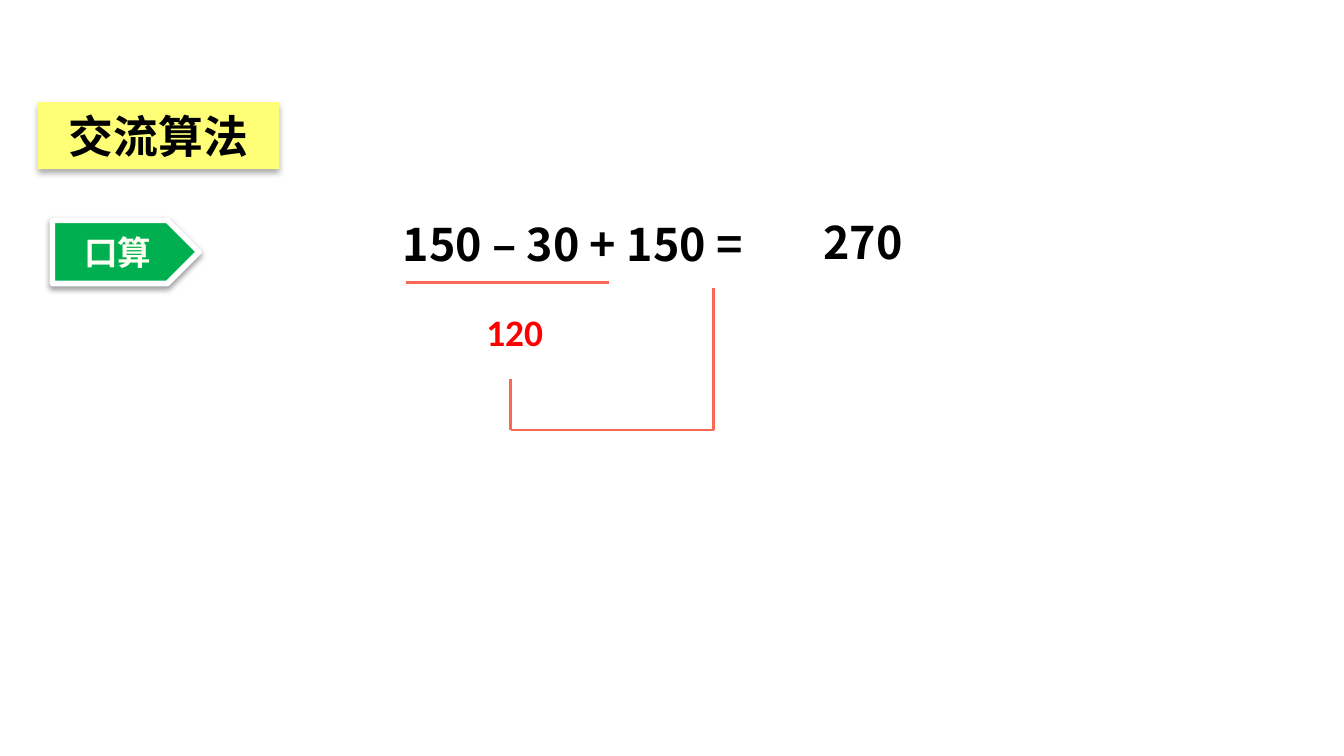
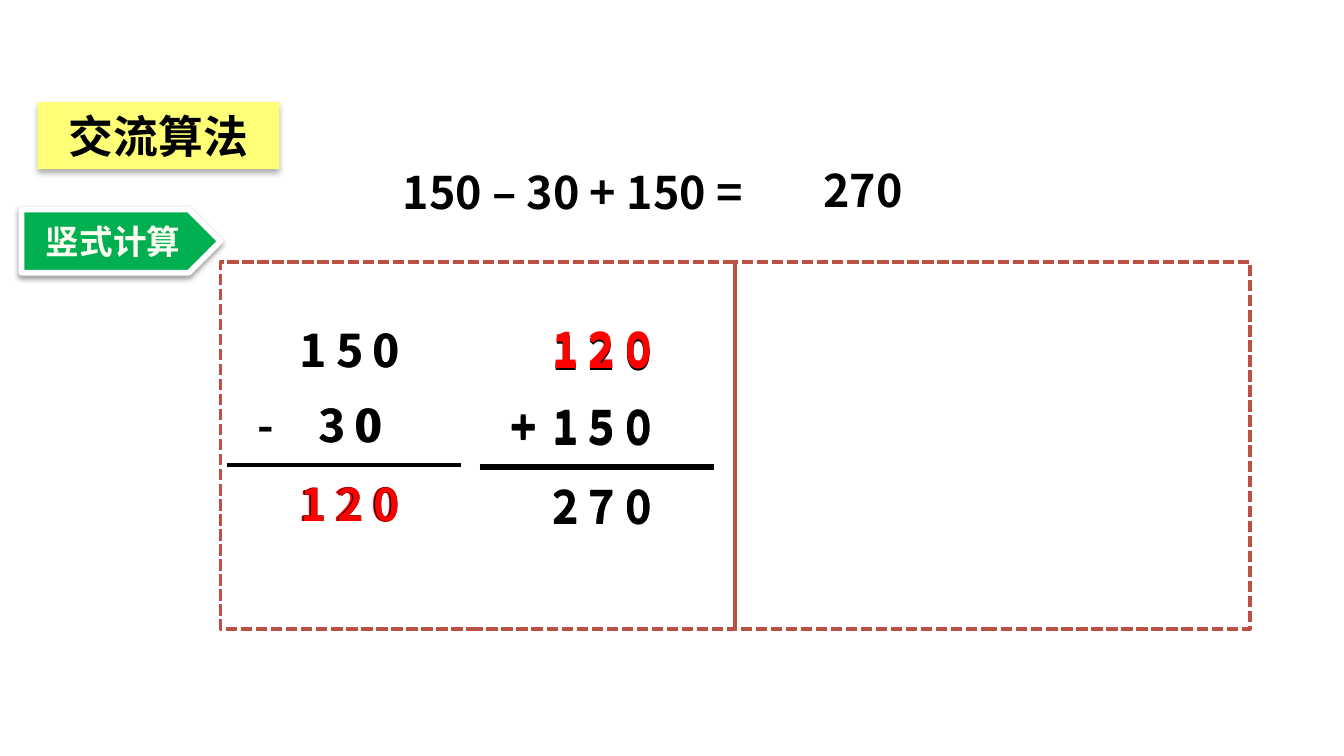
from dataclasses import dataclass

from lxml.etree import SubElement
from pptx import Presentation
from pptx.dml.color import RGBColor
from pptx.enum.dml import MSO_LINE
from pptx.enum.shapes import MSO_CONNECTOR, MSO_SHAPE
from pptx.enum.text import MSO_ANCHOR, PP_ALIGN
from pptx.oxml.ns import qn
from pptx.util import Inches, Pt

# The grid: 100 columns by 56.25 rows of equal cells
CELL = Inches(0.1)
COLUMNS, ROWS = 100, 56.25


@dataclass(frozen=True)
class Theme:
    ink: str = "000000"
    red: str = "FF0000"
    bracket: str = "FA6955"
    frame: str = "BA5143"
    title_fill: str = "FFFF77"
    tag_fill: str = "00B050"
    tag_text: str = "FFFFF4"
    tag_edge: str = "FFFFFF"
    main_font: str = "Noto Sans CJK SC"
    small_font: str = "Calibri"
    main_size: int = 24
    result_size: int = 20
    tag_size: int = 18


THEME = Theme()


@dataclass(frozen=True)
class Area:
    column: float
    row: float
    width: float
    height: float = 5


@dataclass(frozen=True)
class Shadow:
    opacity: int
    blur: float
    distance: float


@dataclass(frozen=True)
class Style:
    color: str = THEME.ink
    size: int = THEME.main_size
    font: str = THEME.main_font
    align: PP_ALIGN = PP_ALIGN.LEFT
    indent: float = 0


@dataclass(frozen=True)
class WrittenSum:
    """A sum set out in columns; carried is the number repeated in red."""
    column: float
    row: float
    first: str
    sign: str
    second: str
    result: str
    carried_down: float
    carried_shift: float = 0
    second_indent: float = 0
    carried_width: float = 19.7


NUMBER = Style()
RED_NUMBER = Style(THEME.red)
RED_RESULT = Style(THEME.red, THEME.result_size, THEME.small_font)
TITLE = Style(align=PP_ALIGN.CENTER)
TAG = Style(THEME.tag_text, THEME.tag_size, THEME.small_font, PP_ALIGN.CENTER)
TITLE_SHADOW = Shadow(32, 3.5, 2.2)
TAG_SHADOW = Shadow(38, 3.1, 1.6)

# Rows of a written sum, counted from its first number
SECOND_DOWN, RULE_DOWN, RESULT_DOWN = 5.6, 11.1, 11.5
NUMBER_WIDTH, SIGN_WIDTH, RULE_WIDTH = 19.7, 10.2, 17.4
SIGN_LEFT, RULE_LEFT = 3.1, 4.4


def cells(count: float) -> int:
    return round(count * CELL)


def place(area: Area) -> tuple[int, ...]:
    return tuple(map(cells, (area.column, area.row, area.width, area.height)))


def write(box, text: str, style: Style) -> None:
    frame = box.text_frame
    frame.word_wrap = True
    frame.vertical_anchor = MSO_ANCHOR.MIDDLE
    frame.margin_top = frame.margin_bottom = 0
    frame.text = text
    para = frame.paragraphs[0]
    para.alignment = style.align
    if style.indent:
        para._p.get_or_add_pPr().set("marL", str(cells(style.indent)))
    font = para.runs[0].font
    font.name, font.size, font.bold = style.font, Pt(style.size), True
    font.color.rgb = RGBColor.from_string(style.color)
    east_asian = SubElement(font._element, qn("a:ea"))
    east_asian.set("typeface", THEME.main_font)


def add_text(shapes, area: Area, text: str, style: Style = NUMBER) -> None:
    write(shapes.add_textbox(*place(area)), text, style)


def add_line(shapes, start: tuple[float, float], end: tuple[float, float],
             color: str, width: float) -> None:
    line = shapes.add_connector(MSO_CONNECTOR.STRAIGHT,
                                *map(cells, (*start, *end)))
    line.line.color.rgb = RGBColor.from_string(color)
    line.line.width = Pt(width)
    SubElement(line._element.spPr, qn("a:effectLst"))


def add_panel(shapes, kind: MSO_SHAPE, area: Area, fill: str = "",
              edge: str = "", edge_width: float = 0):
    panel = shapes.add_shape(kind, *place(area))
    panel.shadow.inherit = False
    if fill:
        panel.fill.solid()
        panel.fill.fore_color.rgb = RGBColor.from_string(fill)
    else:
        panel.fill.background()
    if edge:
        panel.line.color.rgb = RGBColor.from_string(edge)
        panel.line.width = Pt(edge_width)
    else:
        panel.line.fill.background()
    return panel


def cast_shadow(panel, shadow: Shadow) -> None:
    effects = panel._element.spPr.find(qn("a:effectLst"))
    outer = SubElement(effects, qn("a:outerShdw"), blurRad=str(Pt(shadow.blur)),
                       dist=str(Pt(shadow.distance)), dir="5400000",
                       rotWithShape="0")
    color = SubElement(outer, qn("a:srgbClr"), val=THEME.ink)
    SubElement(color, qn("a:alpha"), val=str(shadow.opacity * 1000))


def add_title(page) -> None:
    panel = add_panel(page.shapes, MSO_SHAPE.RECTANGLE,
                      Area(2.8, 7.6, 18), THEME.title_fill)
    cast_shadow(panel, TITLE_SHADOW)
    write(panel, "交流算法", TITLE)


def add_tag(page, area: Area, text: str) -> None:
    panel = add_panel(page.shapes, MSO_SHAPE.PENTAGON, area,
                      THEME.tag_fill, THEME.tag_edge, 3)
    SubElement(panel.line._ln, qn("a:round"))
    cast_shadow(panel, TAG_SHADOW)
    write(panel, text, TAG)


def add_equation(page, row: float) -> None:
    add_text(page.shapes, Area(29, row, 32.9, 5.1), "150 – 30 + 150 =")
    add_text(page.shapes, Area(60.3, row - 0.1, 17.3), "270")


def add_written_sum(page, item: WrittenSum) -> None:
    shapes = page.shapes.add_group_shape().shapes
    left, top = item.column, item.row
    add_text(shapes, Area(left, top, NUMBER_WIDTH), item.first)
    if item.sign:
        add_text(shapes, Area(left - SIGN_LEFT, top + SECOND_DOWN, SIGN_WIDTH),
                 item.sign)
    add_text(shapes, Area(left, top + SECOND_DOWN, NUMBER_WIDTH),
             item.second, Style(indent=item.second_indent))
    if item.sign:
        start, level = left - RULE_LEFT, top + RULE_DOWN
        add_line(shapes, (start, level), (start + RULE_WIDTH, level),
                 THEME.ink, 2)
    add_text(shapes, Area(left, top + RESULT_DOWN, NUMBER_WIDTH), item.result)
    add_text(shapes, Area(left + item.carried_shift, top + item.carried_down,
                          item.carried_width), "1 2 0", RED_NUMBER)


def build_mental_page(page) -> None:
    add_equation(page, 15.6)

    # First step, underlined
    add_line(page.shapes, (30.2, 21), (45.3, 21), THEME.bracket, 1.5)
    add_text(page.shapes, Area(35.2, 22.5, 6.3, 4.4), "120", RED_RESULT)

    # Bracket joining the first result to the last number
    bracket = page.shapes.add_group_shape().shapes
    corners = [(38, 28.2), (38, 32), (53.1, 32), (53.1, 21.4)]
    for start, end in zip(corners, corners[1:]):
        add_line(bracket, start, end, THEME.bracket, 1.5)

    add_tag(page, Area(3.9, 16.4, 10.9, 4.7), "口算")
    add_title(page)


def build_written_page(page) -> None:
    take_away = ("1 5 0", "-", "3 0", "1 2 0")
    add_up = ("1 2 0", "+", "1 5 0", "2 7 0")

    # Back layer of both sums
    add_written_sum(page, WrittenSum(21.4, 23.5, "1 5 0", "", "3 0", "1 2 0",
                                     RESULT_DOWN, -0.2, 1.4))
    add_written_sum(page, WrittenSum(40.1, 23.6, *add_up, -0.2))
    add_equation(page, 11.7)

    # Front layer of both sums
    add_written_sum(page, WrittenSum(21.3, 23.5, *take_away,
                                     RESULT_DOWN, 0.1, 1.4))
    add_written_sum(page, WrittenSum(40.1, 23.7, *add_up, -0.1,
                                     carried_width=12.6))
    add_tag(page, Area(1.6, 15.6, 14.8, 4.7), "竖式计算")

    # Two equal frames side by side
    frames = page.shapes.add_group_shape().shapes
    width = 38.3
    for index in range(2):
        frame = add_panel(frames, MSO_SHAPE.RECTANGLE,
                          Area(16.4 + index * width, 19.5, width, 27.3),
                          edge=THEME.frame, edge_width=2)
        frame.line.dash_style = MSO_LINE.SQUARE_DOT
    add_title(page)


def main() -> None:
    deck = Presentation()
    deck.slide_width, deck.slide_height = cells(COLUMNS), cells(ROWS)
    for build in (build_mental_page, build_written_page):
        build(deck.slides.add_slide(deck.slide_layouts[6]))
    deck.save("out.pptx")


if __name__ == "__main__":
    main()
